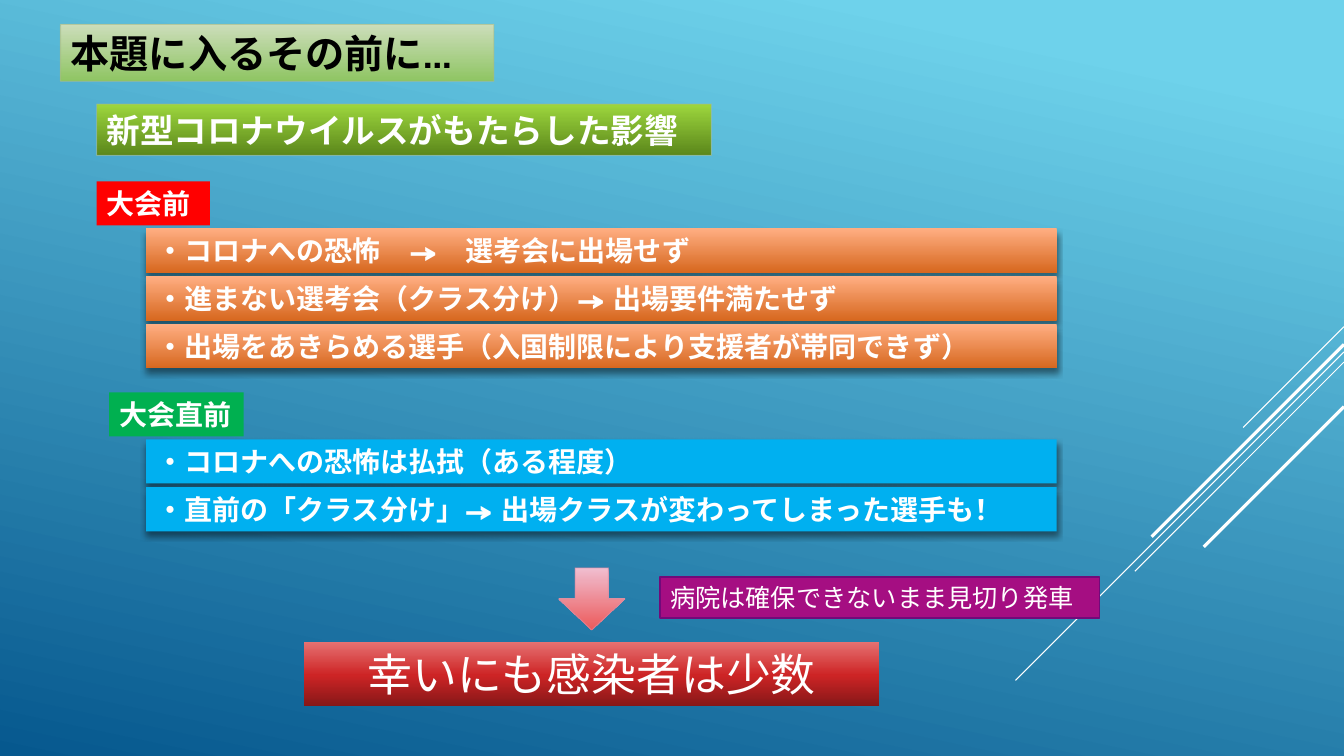
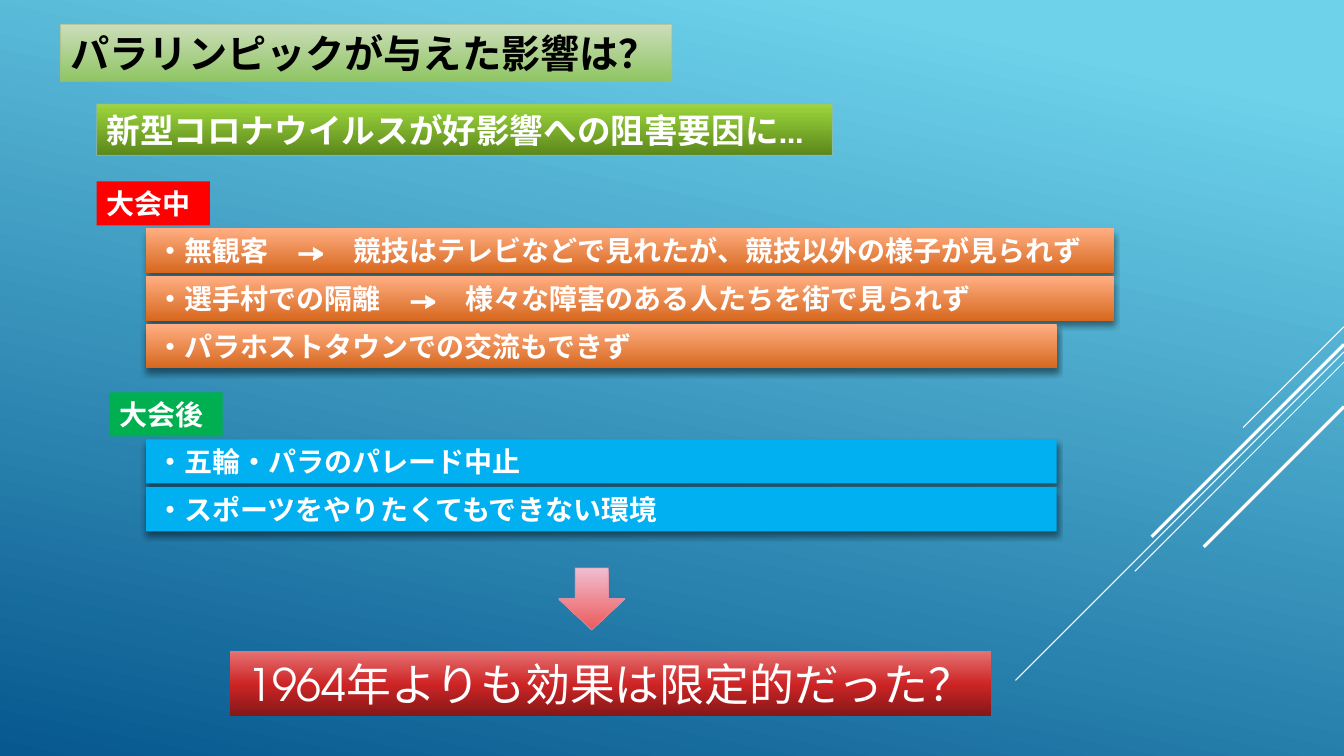
import copy
from lxml import etree
from pptx import Presentation
from pptx.dml.color import RGBColor
from pptx.enum import shapes, text
from pptx.oxml import ns
from pptx.util import Inches, Pt

# Grid: 160 columns by 90 rows of square cells
deck = Presentation()
deck.slide_width, deck.slide_height = Inches(13.33), Inches(7.5)
COL, ROW = deck.slide_width / 160, deck.slide_height / 90
FONT = "TeX Gyre Adventor"

# Shared colours: a hex string, or (position, hex) stops
SKY = [(0.1, "6ED2EB"), (1, "06588E")]
PALE = [(0, "CCDDBA"), (1, "8FC563")]
GREEN = [(0, "9DD63D"), (1, "5B871B")]
RED = [(0, "E67272"), (0.52, "CD2425"), (1, "851718")]
PINK = [(0, "F0BED0"), (1, "EC5A5B")]
ORANGE = [(0, "FFAE82"), (1, "D7681F")]
BLUE, WHITE, EDGE = "00B0F0", "FFFFFF", "A4BB8B"


def paint(fill, hue, turn=90):
    """Fill with one colour, or with a gradient turned clockwise."""
    if isinstance(hue, str):
        fill.solid()
        fill.fore_color.rgb = RGBColor.from_string(hue)
        return
    fill.gradient()
    fill.gradient_angle = 360 - turn
    last = fill.gradient_stops[1]._gs
    for _ in hue[2:]:
        last.addnext(copy.deepcopy(last))
    for stop, (pos, tone) in zip(fill.gradient_stops, hue):
        stop.position = pos
        stop.color.rgb = RGBColor.from_string(tone)


def dress(box, spot, hue, words="", size=20, bold=True, ink=WHITE,
          edge=None, wide=0.75, clear=False, shade=False, mid=False):
    """Place a shape on the grid and give it fill, edge, shadow and text."""
    x, y, w, h = spot
    box.left, box.top = round(x * COL), round(y * ROW)
    box.width, box.height = round(w * COL), round(h * ROW)
    paint(box.fill, hue)
    box.shadow.inherit = False
    props = box._element.spPr
    if edge:
        paint(box.line.fill, edge)
        box.line.width = Pt(wide)
    else:
        box.line.fill.background()
    if clear:
        tone = props.find(".//" + ns.qn("a:ln")).find(".//" + ns.qn("a:srgbClr"))
        etree.SubElement(tone, ns.qn("a:alpha"), val="60000")
    if shade:
        cast = etree.SubElement(
            props.find(ns.qn("a:effectLst")), ns.qn("a:outerShdw"),
            blurRad=str(Pt(4)), dist=str(Pt(3)), dir="5400000", rotWithShape="0")
        tone = etree.SubElement(cast, ns.qn("a:srgbClr"), val="000000")
        etree.SubElement(tone, ns.qn("a:alpha"), val="46000")
    if words:
        frame = box.text_frame
        frame.word_wrap = True
        frame.auto_size = text.MSO_AUTO_SIZE.NONE
        frame.vertical_anchor = text.MSO_ANCHOR.MIDDLE
        para = frame.paragraphs[0]
        para.alignment = text.PP_ALIGN.CENTER if mid else text.PP_ALIGN.LEFT
        run = para.add_run()
        run.text = words
        run.font.name, run.font.size, run.font.bold = FONT, Pt(size), bold
        paint(run.font.fill, ink)
        etree.SubElement(run.font._element, ns.qn("a:ea"), typeface=FONT)


# Wording: title, heading, two lists (label, width, bars), result
pages = [
    dict(title=("本題に入るその前に…", 51.6),
         head=("新型コロナウイルスがもたらした影響", 73.2),
         lists=[("大会前", 13.5, [
                    ("・コロナへの恐怖　→　選考会に出場せず", 108.4),
                    ("・進まない選考会（クラス分け）→ 出場要件満たせず", 108.4),
                    ("・出場をあきらめる選手（入国制限により支援者が帯同できず）", 108.4)]),
                ("大会直前", 16, [
                    ("・コロナへの恐怖は払拭（ある程度）", 108.4),
                    ("・直前の「クラス分け」→ 出場クラスが変わってしまった選手も！", 108.4)])],
         end=("幸いにも感染者は少数", (36.2, 76.4, 68.5, 7.7)),
         note="病院は確保できないまま見切り発車"),
    dict(title=("パラリンピックが与えた影響は？", 72.8),
         head=("新型コロナウイルスが好影響への阻害要因に…", 87.6),
         lists=[("大会中", 13.5, [
                    ("・無観客　→　競技はテレビなどで見れたが、競技以外の様子が見られず", 115.2),
                    ("・選手村での隔離　→　様々な障害のある人たちを街で見られず", 115.2),
                    ("・パラホストタウンでの交流もできず", 108.4)]),
                ("大会後", 13.5, [
                    ("・五輪・パラのパレード中止", 108.4),
                    ("・スポーツをやりたくてもできない環境", 108.4)])],
         end=("1964年よりも効果は限定的だった？", (27.4, 77.5, 90.6, 7.7)),
         note=None),
]
looks = [(11.5, 21.6, "FF0000", ORANGE), (13, 46.7, "00B050", BLUE)]
RECT = shapes.MSO_SHAPE.RECTANGLE
slides = [deck.slides.add_slide(deck.slide_layouts[5]) for _ in pages]

# Master: background and diagonal lines running in from the right edge
master = deck.slide_master
paint(master.background.fill, SKY, 102)
rays = [(38.9, 12, 0.75), (41.9, 39.1, 0.75), (43.1, 24.9, 0.75),
        (41, 22.9, 2.25), (48.4, 16.7, 2.25)]
for num, (y, run, wide) in enumerate(rays):
    ray = slides[0].shapes.add_connector(
        shapes.MSO_CONNECTOR.STRAIGHT, round(160 * COL), round(y * ROW),
        round((160 - run) * COL), round((y + run) * ROW))
    paint(ray.line.fill, WHITE)
    ray.line.width = Pt(wide)
    etree.SubElement(ray._element.spPr, ns.qn("a:effectLst"))
    ray._element.nvCxnSpPr.cNvPr.set("id", str(20 + num))
    master.shapes._spTree.append(ray._element)

for slide, page in zip(slides, pages):
    add = slide.shapes.add_shape

    # Title and heading
    words, w = page["title"]
    dress(slide.shapes.title, (7.2, 2.9, w, 6.8), PALE, words, 28,
          ink="000000", edge=EDGE, clear=True)
    words, w = page["head"]
    dress(add(RECT, 0, 0, 0, 0), (11.5, 12.4, w, 6.1), GREEN, words, 24,
          edge=EDGE, clear=True)

    # Labels with their bars
    for (label, wide, bars), (x, y, flag, hue) in zip(page["lists"], looks):
        dress(add(RECT, 0, 0, 0, 0), (x, y, wide, 5.25), flag, label)
        for row, (words, w) in enumerate(bars):
            dress(add(RECT, 0, 0, 0, 0), (17.4, y + 5.6 + 5.7 * row, w, 5.25),
                  hue, words, shade=True)

    # Arrow, result and note
    dress(add(shapes.MSO_SHAPE.DOWN_ARROW, 0, 0, 0, 0), (66.5, 67.6, 7.9, 7.4),
          PINK, edge="D68BA6", clear=True)
    words, spot = page["end"]
    dress(add(RECT, 0, 0, 0, 0), spot, RED, words, 32, bold=False, mid=True)
    if page["note"]:
        dress(add(RECT, 0, 0, 0, 0), (78.6, 68.7, 52.3, 4.9), "A50E82",
              page["note"], 18, bold=False, edge="710A7A", wide=1.25)

deck.save("out.pptx")
